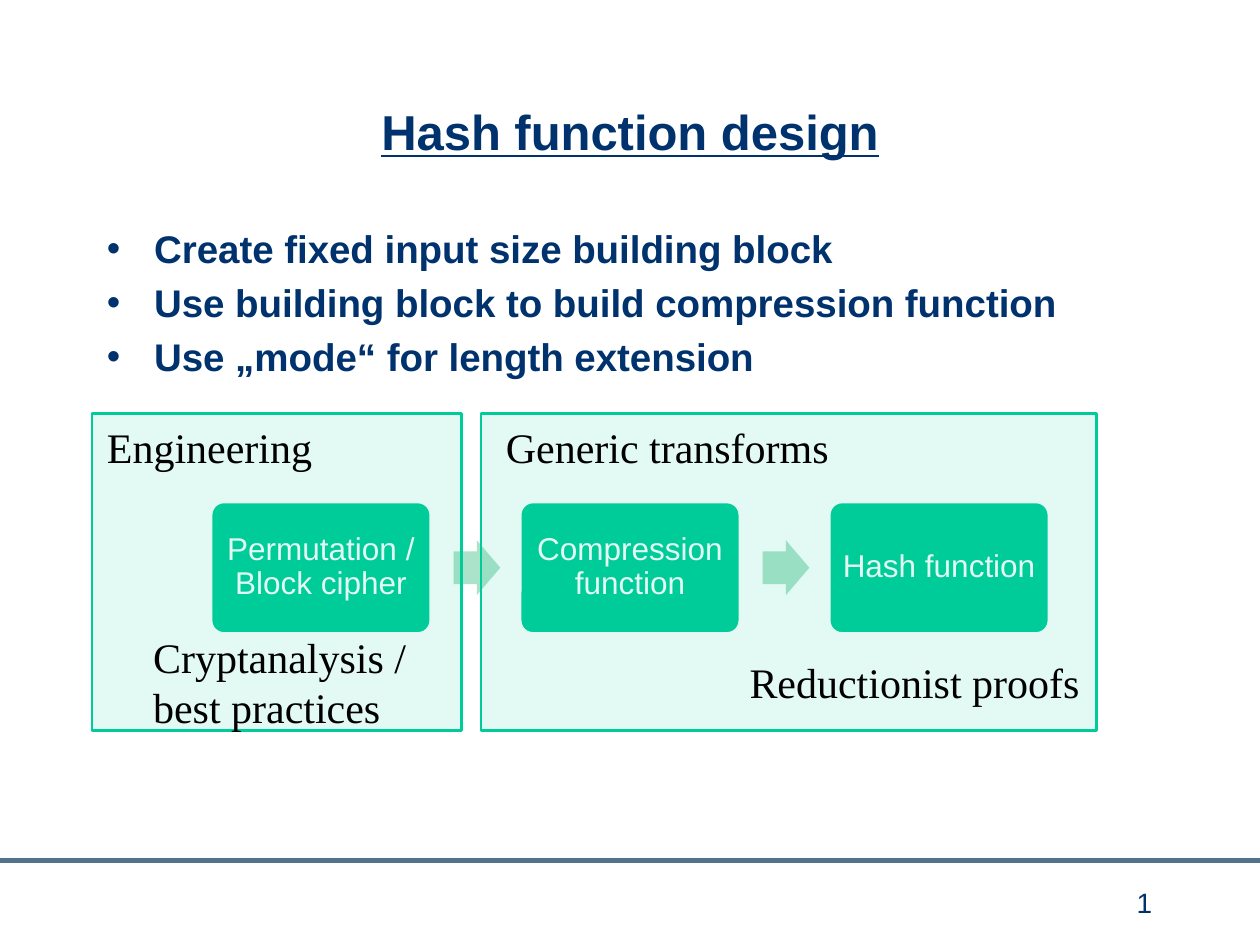
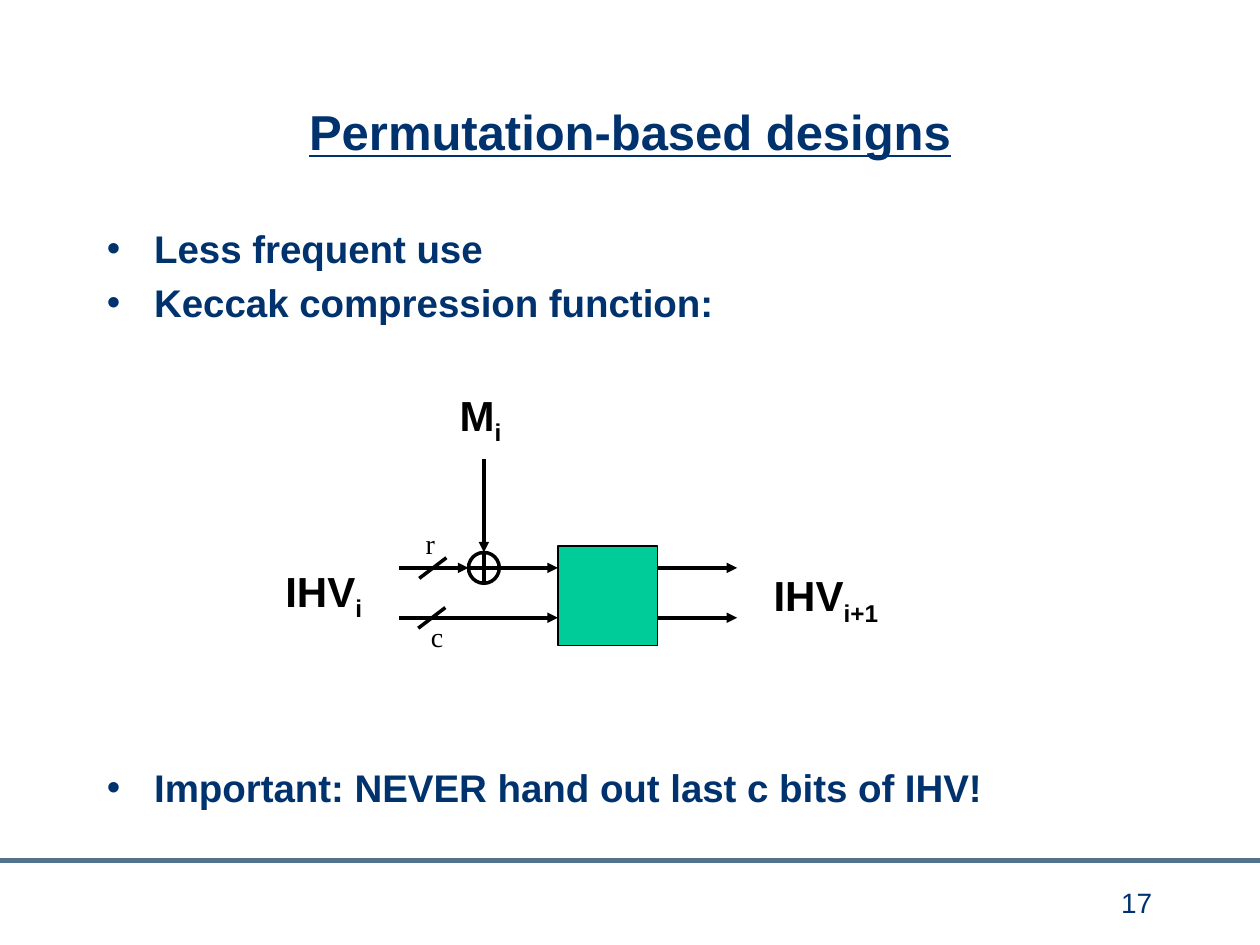
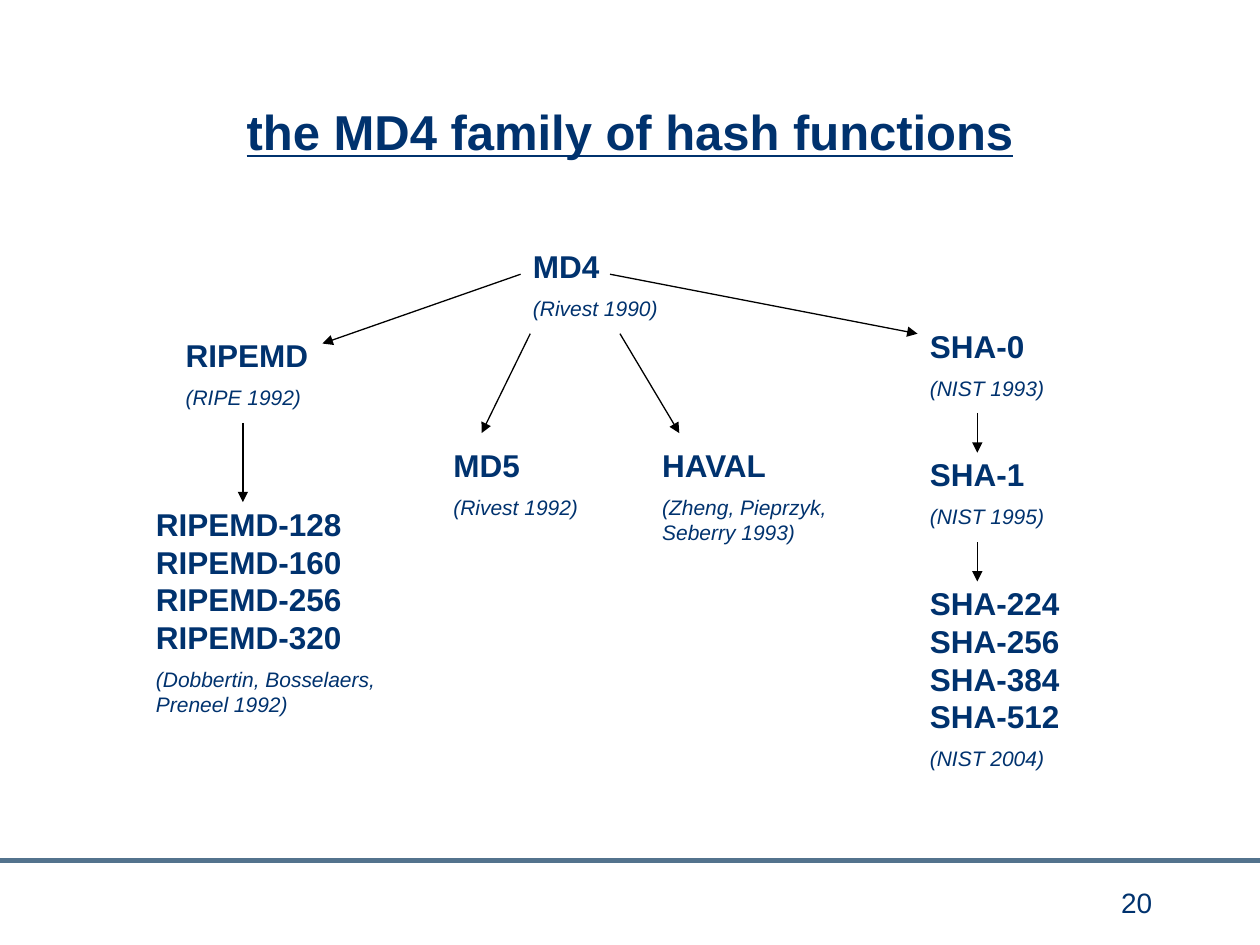
from lxml import etree
from pptx import Presentation
from pptx.dml.color import RGBColor
from pptx.enum import shapes, text
from pptx.oxml import ns
from pptx.util import Pt

NAVY = RGBColor(0x00, 0x32, 0x6E)
RULE = RGBColor(0x53, 0x73, 0x8D)
GREEN = RGBColor(0x00, 0xCC, 0x99)
PALE_GREEN = RGBColor(0xAB, 0xE2, 0xCA)
BLACK = RGBColor(0, 0, 0)
WHITE = RGBColor(0xFF, 0xFF, 0xFF)
SANS, SERIF = "Arial", "Times New Roman"
BODY_LEFT, BODY_TOP, BODY_WIDTH = 54, 125.3, 612
BODY_PITCH = 30.8
SHAPE = shapes.MSO_SHAPE


def place(x, y, width, height):
    return Pt(x), Pt(y), Pt(width), Pt(height)


def style(font, size, color=NAVY, name=SANS, bold=False, italic=False):
    font.size, font.name = Pt(size), name
    font.bold, font.italic = bold, italic
    font.color.rgb = color


def add_line(page, start, end, width=2, color=BLACK, arrow=False):
    line = page.shapes.add_connector(
        shapes.MSO_CONNECTOR.STRAIGHT, *place(*start, *end))
    line.line.width = Pt(width)
    line.line.color.rgb = color
    if arrow:
        head = etree.SubElement(line.line._get_or_add_ln(), ns.qn("a:tailEnd"))
        head.set("type", "triangle")
    etree.SubElement(line._element.spPr, ns.qn("a:effectLst"))


def add_box(page, kind, frame, fill, outline=None, width=0.75, opacity=None):
    box = page.shapes.add_shape(kind, *place(*frame))
    box.shadow.inherit = False
    box.fill.solid()
    box.fill.fore_color.rgb = fill
    if opacity is not None:
        color = box._element.spPr.find(".//" + ns.qn("a:srgbClr"))
        etree.SubElement(color, ns.qn("a:alpha")).set("val", str(opacity * 1000))
    if outline is None:
        box.line.fill.background()
    else:
        box.line.color.rgb = outline
        box.line.width = Pt(width)
    return box


def add_text_box(page, frame):
    box = page.shapes.add_textbox(*place(*frame))
    box.text_frame.word_wrap = True
    return box.text_frame


def add_label(page, words, frame, size=24):
    label = add_text_box(page, frame)
    label.text = words
    for span in label.paragraphs[0].runs:
        style(span.font, size, BLACK, SERIF)


def add_symbol(page, base, index, frame):
    """Bold symbol with a subscript index."""
    para = add_text_box(page, frame).paragraphs[0]
    for words in (base, index):
        span = para.add_run()
        span.text = words
        style(span.font, 24, BLACK, bold=True)
    span._r.get_or_add_rPr().set("baseline", "-25000")


def add_bullets(page, items, first_row=0):
    top = BODY_TOP + first_row * BODY_PITCH
    body = add_text_box(page, (BODY_LEFT, top, BODY_WIDTH, len(items) * BODY_PITCH + 7))
    body.text = "\n".join(items)
    for number, para in enumerate(body.paragraphs):
        props = para._p.get_or_add_pPr()
        props.set("marL", str(Pt(27)))
        props.set("indent", str(-Pt(27)))
        etree.SubElement(props, ns.qn("a:buFont")).set("typeface", SANS)
        etree.SubElement(props, ns.qn("a:buChar")).set("char", "•")
        if number:
            para.space_before = Pt(4.4)
        style(para.runs[0].font, 22, bold=True)


def add_family_member(page, names, source, frame):
    member = add_text_box(page, frame)
    member.text = f"{names}\n{source}"
    first, second = member.paragraphs
    second.space_before = Pt(6)
    style(first.runs[0].font, 18, bold=True)
    style(second.runs[0].font, 12, italic=True)


def add_page(deck, heading, number):
    page = deck.slides.add_slide(deck.slide_layouts[5])
    title = page.shapes.title
    title.left, title.top, title.width, title.height = place(109.5, 30, 501, 90)
    title.text_frame.text = heading
    title.text_frame.vertical_anchor = text.MSO_ANCHOR.MIDDLE
    para = title.text_frame.paragraphs[0]
    para.alignment = text.PP_ALIGN.CENTER
    style(para.runs[0].font, 28, bold=True)
    para.runs[0].font.underline = True

    add_line(page, (0, 491.8), (720, 491.8), 3, RULE)
    footer = add_text_box(page, (598.5, 502.5, 67, 30))
    footer.text = str(number)
    footer.paragraphs[0].alignment = text.PP_ALIGN.RIGHT
    style(footer.paragraphs[0].runs[0].font, 16)
    return page


def add_stage(page, words, x):
    stage = add_box(page, SHAPE.ROUNDED_RECTANGLE, (x, 286.6, 126, 75.6), GREEN, WHITE, 2)
    stage.adjustments[0] = 0.1
    frame = stage.text_frame
    frame.word_wrap = True
    frame.margin_left = frame.margin_right = Pt(4)
    frame.vertical_anchor = text.MSO_ANCHOR.MIDDLE
    frame.text = words
    para = frame.paragraphs[0]
    para.alignment = text.PP_ALIGN.CENTER
    para.line_spacing = 0.9
    style(para.runs[0].font, 18, WHITE)


def add_panel(page, x, width):
    add_box(page, SHAPE.RECTANGLE, (x, 236.2, width, 181.4), GREEN, GREEN, 1.5, opacity=11)


def build_design(deck):
    page = add_page(deck, "Hash function design", 1)
    add_bullets(page, ["Create fixed input size building block",
                       "Use building block to build compression function",
                       "Use „mode“ for length extension"])
    stages = ["Permutation / Block cipher", "Compression function", "Hash function"]
    for column, words in enumerate(stages):
        x = 120.4 + column * 176.6
        if column:
            arrow = add_box(page, SHAPE.RIGHT_ARROW, (x - 37.8, 308.8, 26.7, 31.2), PALE_GREEN)
            arrow.adjustments[0] = 0.6
        add_stage(page, words, x)
    add_panel(page, 275, 351.5)
    add_label(page, "Reductionist proofs", (421.2, 371.5, 278, 36))
    add_label(page, "Generic transforms", (282, 237.6, 345.6, 36))
    add_panel(page, 52.6, 211)
    add_label(page, "Engineering", (54, 237.6, 278, 36))
    add_label(page, "Cryptanalysis /\vbest practices", (80.4, 357.3, 278, 65.5))


def build_permutation(deck):
    page = add_page(deck, "Permutation-based designs", 17)
    add_bullets(page, ["Less frequent use", "Keccak compression function:"])
    add_bullets(page, ["Important: NEVER hand out last c bits of IHV!"], first_row=10)

    rate_y, capacity_y, xor_x, radius = 324.5, 353, 276.5, 8.8
    start, block_left, block_size, end = 228, 318.8, 57, 421.2
    block_right = block_left + block_size
    xor_left, xor_right = xor_x - radius, xor_x + radius
    xor_top, xor_bottom = rate_y - radius, rate_y + radius
    add_box(page, SHAPE.RECTANGLE, (block_left, 312, block_size, block_size), GREEN, BLACK)
    add_box(page, SHAPE.OVAL, (xor_left, xor_top, 2 * radius, 2 * radius), WHITE, BLACK, 2)
    add_line(page, (xor_left, rate_y), (xor_right, rate_y))
    add_line(page, (xor_x, xor_top), (xor_x, xor_bottom))
    add_line(page, (xor_x, 262.3), (xor_x, xor_top), arrow=True)
    for left, right, y in [(start, xor_left, rate_y), (xor_right, block_left, rate_y),
                           (start, block_left, capacity_y), (block_right, end, rate_y),
                           (block_right, end, capacity_y)]:
        add_line(page, (left, y), (right, y), arrow=True)

    for words, x, y, slash_x, wire_y in [("r", 236.2, 297.4, 239.6, rate_y),
                                         ("c", 239.2, 350.6, 239, capacity_y)]:
        add_label(page, words, (x, y, 17.3, 26.6), 16)
        add_line(page, (slash_x, wire_y + 6), (slash_x + 15.5, wire_y - 5.8))
    add_symbol(page, "IHV", "i", (156, 319.5, 67, 36))
    add_symbol(page, "IHV", "i+1", (435, 322, 80, 36))
    add_symbol(page, "M", "i", (255.6, 219, 67, 36))


def build_family(deck):
    page = add_page(deck, "the MD4 family of hash functions", 20)
    sha_x, width, height = 524.3, 90.7, 50.4
    members = [
        ("MD4", "(Rivest 1990)", (297.5, 137.5, width, height)),
        ("RIPEMD", "(RIPE 1992)", (99, 188.5, width, height)),
        ("RIPEMD-128 RIPEMD-160 RIPEMD-256 RIPEMD-320",
         "(Dobbertin, Bosselaers, Preneel 1992)", (82, 285, 147.6, 129.6)),
        ("MD5", "(Rivest 1992)", (252, 251.3, width, height)),
        ("HAVAL", "(Zheng, Pieprzyk, Seberry 1993)", (371.3, 251.3, 113, 64.8)),
        ("SHA-0", "(NIST 1993)", (sha_x, 183.3, width, height)),
        ("SHA-1", "(NIST 1995)", (sha_x, 256.5, width, height)),
        ("SHA-224 SHA-256 SHA-384 SHA-512", "(NIST 2004)", (sha_x, 330.2, width, 115.2)),
    ]
    for member in members:
        add_family_member(page, *member)
    descents = [
        ((297.5, 156.7), (184.3, 196.3)), ((303, 190.7), (275.2, 247.5)),
        ((354.3, 190.7), (388.2, 247.5)), ((348.6, 156.7), (524.3, 190.7)),
        ((138.8, 241.7), (138.8, 287)), ((558.5, 236), (558.5, 258.7)),
        ((558.5, 309.8), (558.5, 332.3)),
    ]
    for start, end in descents:
        add_line(page, start, end, 0.75, arrow=True)


def main():
    deck = Presentation()
    deck.slide_width, deck.slide_height = Pt(720), Pt(540)
    build_design(deck)
    build_permutation(deck)
    build_family(deck)
    deck.save("out.pptx")


if __name__ == "__main__":
    main()
